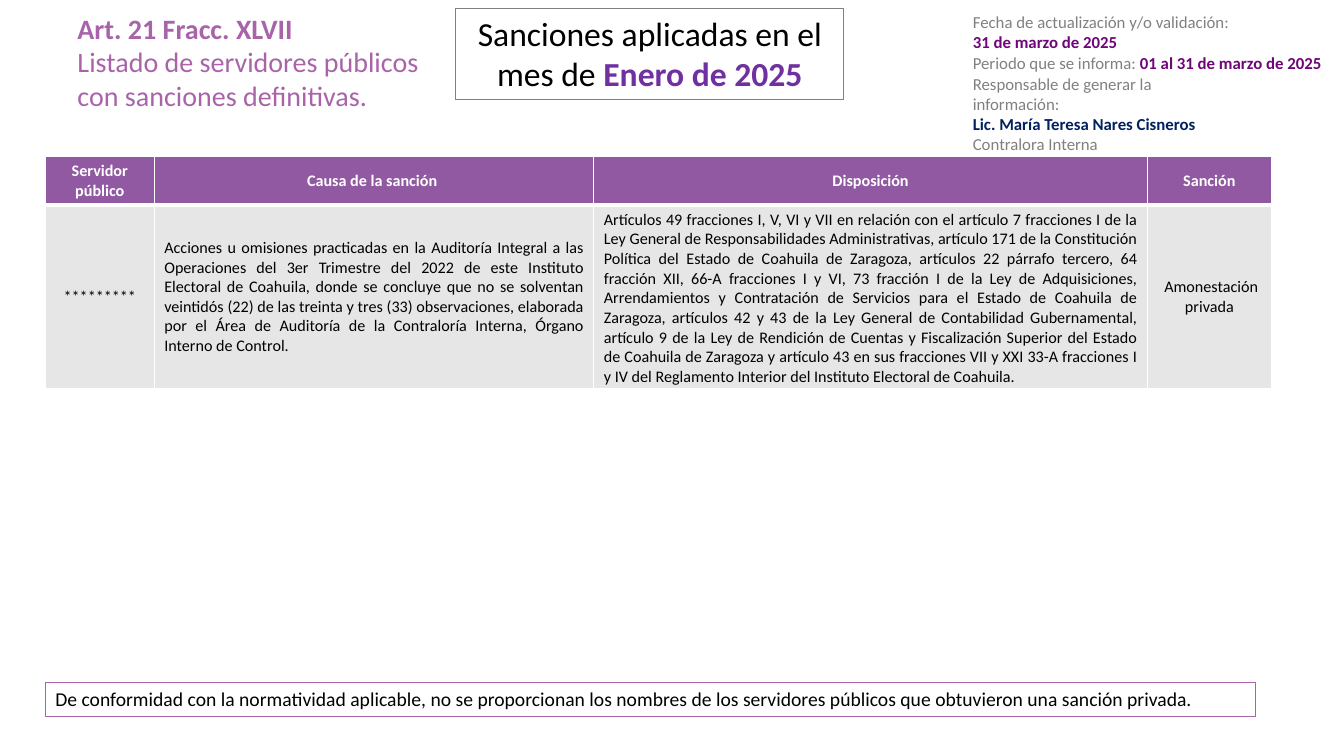
from lxml import etree
from pptx import Presentation
from pptx.dml.color import RGBColor
from pptx.enum.shapes import MSO_SHAPE
from pptx.enum.text import MSO_ANCHOR, MSO_AUTO_SIZE, PP_ALIGN
from pptx.oxml.ns import qn
from pptx.util import Inches, Pt

RECT = MSO_SHAPE.RECTANGLE
MIDDLE = MSO_ANCHOR.MIDDLE
GROW = MSO_AUTO_SIZE.SHAPE_TO_FIT_TEXT
LEFT, CENTER, JUSTIFY = PP_ALIGN.LEFT, PP_ALIGN.CENTER, PP_ALIGN.JUSTIFY

WHITE = RGBColor(0xFF, 0xFF, 0xFF)
BLACK = RGBColor(0, 0, 0)
GRAY = RGBColor(0x80, 0x80, 0x80)
PALE = RGBColor(0xE7, 0xE6, 0xE6)
LILAC = RGBColor(0xA9, 0x63, 0xA9)
PURPLE = RGBColor(0x90, 0x59, 0xA1)
VIOLET = RGBColor(0x70, 0x30, 0xA0)
PLUM = RGBColor(0x6F, 0x05, 0x79)
NAVY = RGBColor(0x00, 0x20, 0x60)
FONT = "Calibri"

ARTICLE = [
    [("Art. 21 Fracc. XLVII", LILAC, True)],
    [("Listado de servidores públicos con sanciones definitivas.", LILAC, False)],
]
TITLE = [[("Sanciones aplicadas en el mes de ", BLACK, False),
          ("Enero de 2025", VIOLET, True)]]
DATES = [
    [("Fecha de actualización y/o validación:", GRAY, False)],
    [("31 de marzo de 2025", PLUM, True)],
    [("Periodo que se informa: ", GRAY, False),
     ("01 al 31 de marzo de 2025", PLUM, True)],
]
OFFICER = [
    [("Responsable de generar la información:", GRAY, False)],
    [("Lic. María Teresa Nares Cisneros", NAVY, True)],
    [("Contralora Interna", GRAY, False)],
]
NOTICE = [[("De conformidad con la normatividad aplicable, no se proporcionan los "
            "nombres de los servidores públicos que obtuvieron una sanción privada.",
            BLACK, False)]]

HEADER = ["Servidor público", "Causa de la sanción ", "Disposición", "Sanción"]
CASE = [
    "*********",
    "Acciones u omisiones practicadas en la Auditoría Integral a las Operaciones "
    "del 3er Trimestre del 2022 de este Instituto Electoral de Coahuila, donde se "
    "concluye que no se solventan veintidós (22) de las treinta y tres (33) "
    "observaciones, elaborada por el Área de Auditoría de la Contraloría Interna, "
    "Órgano Interno de Control.",
    "Artículos 49 fracciones I, V, VI y VII en relación con el artículo 7 fracciones "
    "I de la Ley General de Responsabilidades Administrativas, artículo 171 de la "
    "Constitución Política del Estado de Coahuila de Zaragoza, artículos 22 párrafo "
    "tercero, 64 fracción XII, 66-A fracciones I y VI, 73 fracción I de la Ley de "
    "Adquisiciones, Arrendamientos y Contratación de Servicios para el Estado de "
    "Coahuila de Zaragoza, artículos 42 y 43 de la Ley General de Contabilidad "
    "Gubernamental, artículo 9 de la Ley de Rendición de Cuentas y Fiscalización "
    "Superior del Estado de Coahuila de Zaragoza y artículo 43 en sus fracciones VII "
    "y XXI 33-A fracciones I y IV del Reglamento Interior del Instituto Electoral de "
    "Coahuila.",
    " Amonestación privada",
]
WIDTHS = [1.08, 4.36, 5.49, 1.23]
ROWS = [
    (HEADER, 0.39, PURPLE, WHITE, True, [CENTER] * 4, 3),
    (CASE, 0.41, PALE, BLACK, False, [CENTER, JUSTIFY, JUSTIFY, CENTER], 1),
]


def set_font(font, size, color, bold):
    font.name, font.size, font.bold = FONT, Pt(size), bold
    font.color.rgb = color


def write(shape, lines, size, align=LEFT, wrap=True):
    frame = shape.text_frame
    frame.word_wrap = wrap
    frame.auto_size = GROW
    frame.vertical_anchor = MSO_ANCHOR.TOP
    for i, line in enumerate(lines):
        para = frame.add_paragraph() if i else frame.paragraphs[0]
        para.alignment = align
        for text, color, bold in line:
            run = para.add_run()
            run.text = text
            set_font(run.font, size, color, bold)


def add_text(slide, place, lines, size, wrap=True):
    box = slide.shapes.add_textbox(*map(Inches, place))
    write(box, lines, size, wrap=wrap)


def add_frame(slide, place, lines, size, line, width, align=LEFT):
    box = slide.shapes.add_shape(RECT, *map(Inches, place))
    box.shadow.inherit = False
    box.fill.solid()
    box.fill.fore_color.rgb = WHITE
    box.line.color.rgb = line
    box.line.width = Pt(width)
    write(box, lines, size, align)


def add_edges(cell, base):
    props = cell._tc.get_or_add_tcPr()
    for i, side in enumerate(("lnL", "lnR", "lnT", "lnB")):
        width = base if side == "lnB" else 1
        edge = etree.Element(qn("a:" + side), w=str(Pt(width)))
        fill = etree.SubElement(edge, qn("a:solidFill"))
        etree.SubElement(fill, qn("a:srgbClr"), val=str(WHITE))
        props.insert(i, edge)


def add_cases(slide):
    height = sum(row[1] for row in ROWS)
    place = (0.45, 1.55, sum(WIDTHS), height)
    table = slide.shapes.add_table(len(ROWS), len(WIDTHS), *map(Inches, place)).table
    for col, width in zip(table.columns, WIDTHS):
        col.width = Inches(width)
    for r, (texts, height, fill, color, bold, aligns, base) in enumerate(ROWS):
        table.rows[r].height = Inches(height)
        for c, (text, align) in enumerate(zip(texts, aligns)):
            cell = table.cell(r, c)
            cell.text = text
            cell.vertical_anchor = MIDDLE
            cell.fill.solid()
            cell.fill.fore_color.rgb = fill
            para = cell.text_frame.paragraphs[0]
            para.alignment = align
            set_font(para.font, 11.5, color, bold)
            add_edges(cell, base)


def main():
    deck = Presentation()
    deck.slide_width, deck.slide_height = Inches(13.33), Inches(7.5)
    slide = deck.slides.add_slide(deck.slide_layouts[6])
    add_text(slide, (0.67, 0.06, 3.85, 1.45), ARTICLE, 20)
    add_frame(slide, (0.45, 6.77, 12, 0.34), NOTICE, 14, LILAC, 1)
    add_cases(slide)
    add_frame(slide, (4.52, 0.08, 3.85, 0.91), TITLE, 24, GRAY, 0.75, CENTER)
    add_text(slide, (9.55, 0.07, 3.79, 0.91), DATES, 12, wrap=False)
    add_text(slide, (9.55, 0.68, 2.65, 1.59), OFFICER, 12)
    deck.save("out.pptx")


if __name__ == "__main__":
    main()
